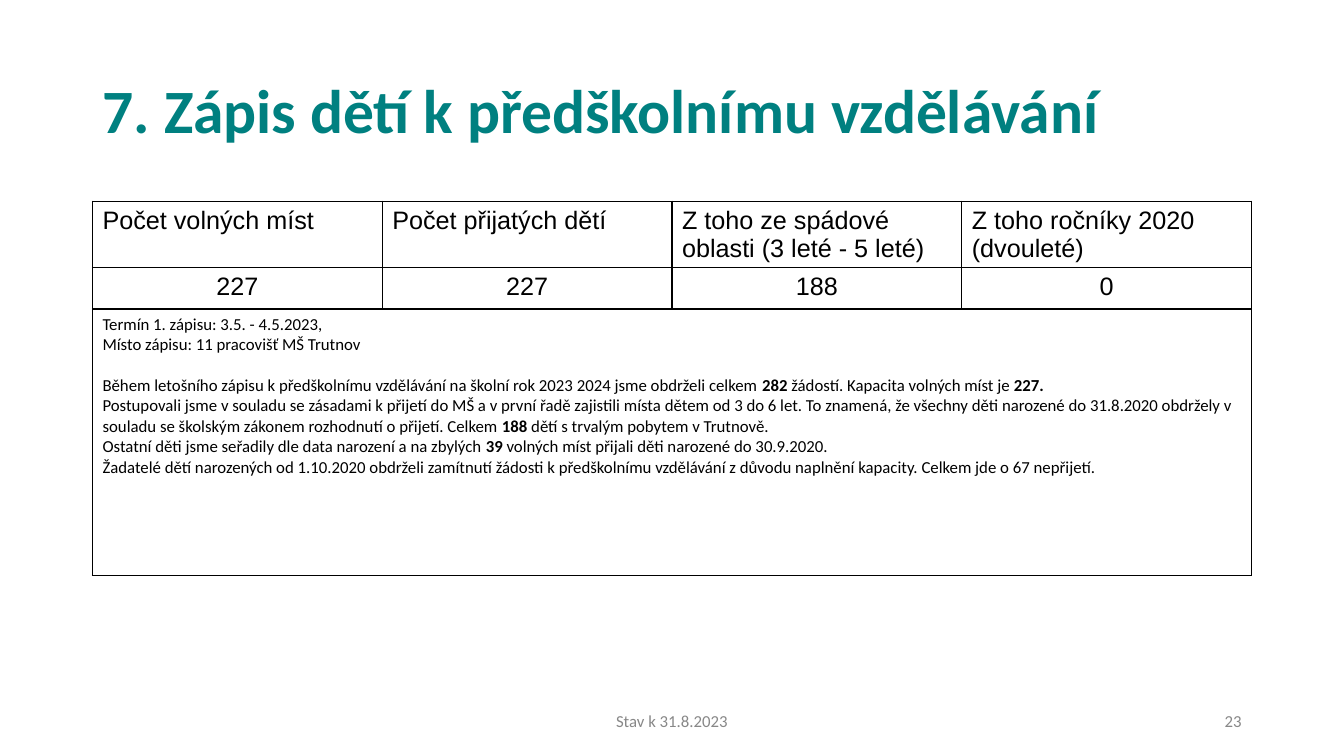
from lxml import etree
from pptx import Presentation
from pptx import util as u
from pptx.dml.color import RGBColor
from pptx.enum import text
from pptx.oxml import ns

TEAL = RGBColor(0x00, 0x80, 0x80)
BLACK = RGBColor(0x00, 0x00, 0x00)
WHITE = RGBColor(0xFF, 0xFF, 0xFF)
GREY = RGBColor(0x88, 0x88, 0x88)

LEFT = u.Cm(2.33)
WIDTH = u.Cm(29.21)
ROW_HEIGHTS = (1.66, 1.04, 6.71)

HEADINGS = (
    "Počet volných míst",
    "Počet přijatých dětí",
    "Z toho ze spádové oblasti (3 leté - 5 leté)",
    "Z toho ročníky 2020 (dvouleté)",
)
COUNTS = ("227", "227", "188", "0")

# Bold passages stand between asterisks.
DATE_AND_PLACE = (
    "Termín 1. zápisu: 3.5. - 4.5.2023,",
    "Místo zápisu: 11 pracovišť MŠ Trutnov",
)
COURSE = (
    "Během letošního zápisu k předškolnímu vzdělávání na školní rok 2023 2024 "
    "jsme obdrželi celkem* 282* žádostí. Kapacita volných míst je *227.*",
    "Postupovali jsme v souladu se zásadami k přijetí do MŠ a v první řadě zajistili "
    "místa dětem od 3 do 6 let. To znamená, že všechny děti narozené do 31.8.2020 "
    "obdržely v souladu se školským zákonem rozhodnutí o přijetí. Celkem *188 *"
    "dětí s trvalým pobytem v Trutnově.",
    "Ostatní děti jsme seřadily dle data narození a na zbylých *39* volných míst "
    "přijali děti narozené do 30.9.2020.",
    "Žadatelé dětí narozených od 1.10.2020 obdrželi zamítnutí žádosti k předškolnímu "
    "vzdělávání z důvodu naplnění kapacity. Celkem jde o 67 nepřijetí.",
)


def format_font(font, name, size, color, bold=False):
    font.name = name
    font.size = u.Pt(size)
    font.color.rgb = color
    font.bold = bold


def write_line(paragraph, line, name, size, color, align=text.PP_ALIGN.LEFT):
    """Fill a paragraph, with the passages between asterisks in bold."""
    paragraph.alignment = align
    for index, part in enumerate(line.split("*")):
        if part:
            run = paragraph.add_run()
            run.text = part
            format_font(run.font, name, size, color, bold=index % 2 == 1)


def set_title(slide, title_text):
    title = slide.shapes.title
    title.left, title.top, title.width, title.height = LEFT, u.Cm(1.01), WIDTH, u.Cm(3.68)
    frame = title.text_frame
    frame.text = title_text
    frame.auto_size = text.MSO_AUTO_SIZE.NONE
    frame.vertical_anchor = text.MSO_ANCHOR.MIDDLE
    paragraph = frame.paragraphs[0]
    paragraph.alignment = text.PP_ALIGN.LEFT
    paragraph.line_spacing = 0.9
    format_font(paragraph.runs[0].font, "Calibri", 44, TEAL, bold=True)


def format_cell(cell):
    """Give a cell a white fill and thin black borders."""
    properties = cell._tc.get_or_add_tcPr()
    for side in ("a:lnL", "a:lnR", "a:lnT", "a:lnB"):
        line = etree.SubElement(properties, ns.qn(side), w=str(u.Pt(1)))
        fill = etree.SubElement(line, ns.qn("a:solidFill"))
        etree.SubElement(fill, ns.qn("a:srgbClr"), val=str(BLACK))
    cell.fill.solid()
    cell.fill.fore_color.rgb = WHITE


def add_enrolment_table(slide):
    height = u.Cm(sum(ROW_HEIGHTS))
    table = slide.shapes.add_table(
        len(ROW_HEIGHTS), len(HEADINGS), LEFT, u.Cm(5.07), WIDTH, height
    ).table
    table.first_row = table.horz_banding = False
    for row, row_height in zip(table.rows, ROW_HEIGHTS):
        row.height = u.Cm(row_height)
    for cell in table.iter_cells():
        format_cell(cell)
    for column, (heading, count) in enumerate(zip(HEADINGS, COUNTS)):
        write_line(table.cell(0, column).text_frame.paragraphs[0], heading, "Arial", 18, BLACK)
        write_line(table.cell(1, column).text_frame.paragraphs[0], count, "Arial", 18, BLACK,
                   text.PP_ALIGN.CENTER)

    report = table.cell(2, 0)
    report.merge(table.cell(2, len(HEADINGS) - 1))
    frame = report.text_frame
    for index, line in enumerate(DATE_AND_PLACE + COURSE):
        paragraph = frame.add_paragraph() if index else frame.paragraphs[0]
        write_line(paragraph, line, "Calibri", 12, BLACK)
    frame.paragraphs[len(DATE_AND_PLACE)].space_before = u.Pt(14.6)


def add_footer(slide, line, left, width, align):
    box = slide.shapes.add_textbox(u.Cm(left), u.Cm(17.65), u.Cm(width), u.Cm(1.01))
    frame = box.text_frame
    frame.word_wrap = True
    frame.vertical_anchor = text.MSO_ANCHOR.MIDDLE
    write_line(frame.paragraphs[0], line, "Calibri", 12, GREY, align)


def main():
    presentation = Presentation()
    presentation.slide_width = u.Cm(33.87)
    presentation.slide_height = u.Cm(19.05)
    slide = presentation.slides.add_slide(presentation.slide_layouts[5])
    set_title(slide, "7. Zápis dětí k předškolnímu vzdělávání")
    add_enrolment_table(slide)
    add_footer(slide, "Stav k 31.8.2023", 11.22, 11.43, text.PP_ALIGN.CENTER)
    add_footer(slide, "23", 23.92, 7.62, text.PP_ALIGN.RIGHT)
    presentation.save("out.pptx")


if __name__ == "__main__":
    main()
